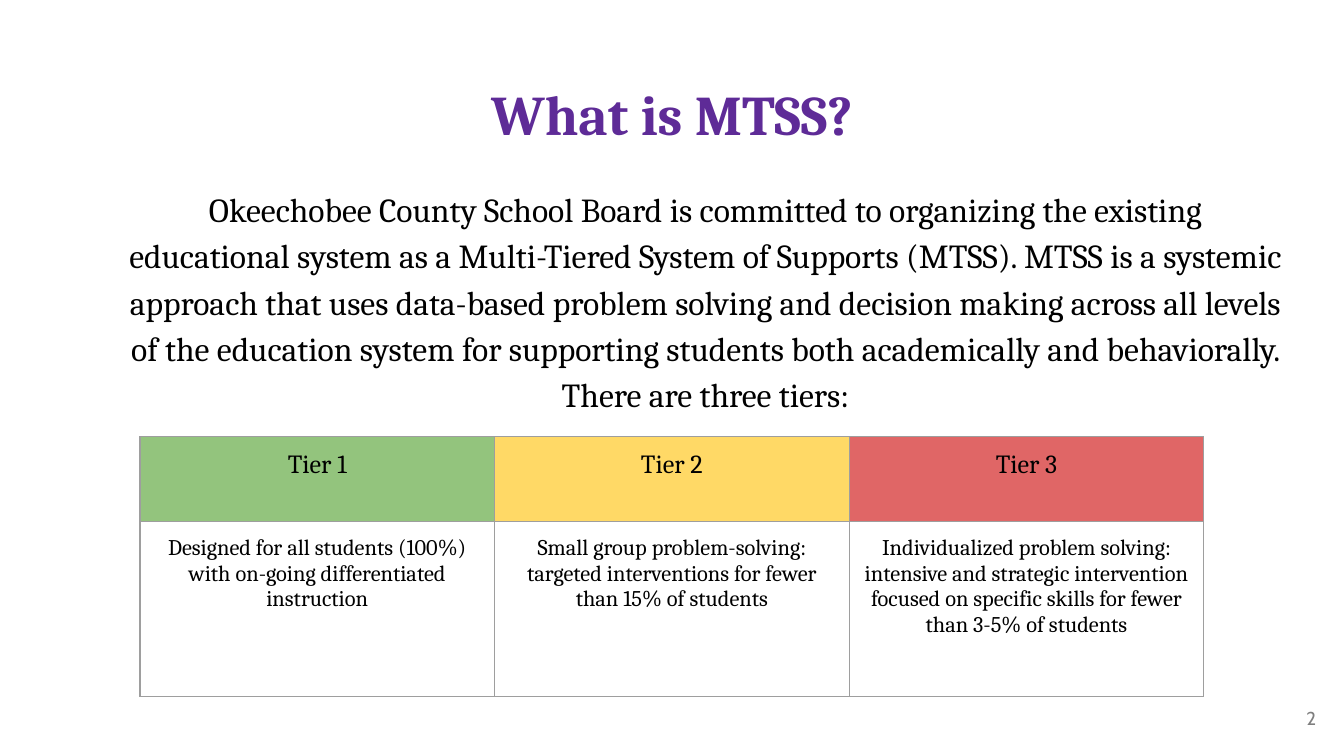
from dataclasses import dataclass

from lxml import etree
from pptx import Presentation
from pptx.dml.color import RGBColor
from pptx.enum.text import MSO_ANCHOR, PP_ALIGN
from pptx.oxml.ns import qn
from pptx.util import Pt

CENTER, RIGHT = PP_ALIGN.CENTER, PP_ALIGN.RIGHT
TOP, MIDDLE = MSO_ANCHOR.TOP, MSO_ANCHOR.MIDDLE


@dataclass(frozen=True)
class Theme:
    serif: str = "Cambria"
    sans: str = "Cabin"
    ink: str = "000000"
    heading: str = "5E2B97"
    muted: str = "7F7F7F"
    border: str = "9E9E9E"
    tier_fills: tuple = ("93C47D", "FFD966", "E06666")
    title_size: float = 30
    body_size: float = 18
    tier_size: float = 14
    detail_size: float = 12
    number_size: float = 10
    inset: float = 7.2
    border_width: float = 0.75


class SlideBuilder:
    """Draws styled text and tables on one slide."""

    def __init__(self, slide, theme):
        self.slide = slide
        self.theme = theme

    def style(self, paragraph, size, color, font, align=CENTER, bold=False):
        paragraph.alignment = align
        paragraph.font.size = Pt(size)
        paragraph.font.name = font
        paragraph.font.bold = bold
        paragraph.font.color.rgb = RGBColor.from_string(color)

    def text(self, words, box, size, color=None, font=None, align=CENTER,
             bold=False, anchor=TOP):
        frame = self.slide.shapes.add_textbox(*map(Pt, box)).text_frame
        frame.word_wrap = True
        frame.vertical_anchor = anchor
        frame.margin_left = frame.margin_right = Pt(self.theme.inset)
        frame.margin_top = frame.margin_bottom = Pt(self.theme.inset)
        paragraph = frame.paragraphs[0]
        paragraph.text = words
        self.style(paragraph, size, color or self.theme.ink,
                   font or self.theme.serif, align, bold)
        return paragraph

    def indented_text(self, words, box, size, indent, spacing):
        paragraph = self.text(words, box, size)
        paragraph.line_spacing = spacing
        properties = paragraph._p.get_or_add_pPr()
        properties.set("marL", str(Pt(indent)))
        properties.set("indent", "0")

    def borders(self, cell):
        properties = cell._tc.get_or_add_tcPr()
        for side in ("a:lnL", "a:lnR", "a:lnT", "a:lnB"):
            line = etree.SubElement(properties, qn(side),
                                    w=str(Pt(self.theme.border_width)))
            fill = etree.SubElement(line, qn("a:solidFill"))
            etree.SubElement(fill, qn("a:srgbClr"), val=self.theme.border)

    def cell(self, cell, words, size, fill=None):
        cell.margin_left = cell.margin_right = Pt(self.theme.inset)
        cell.margin_top = cell.margin_bottom = Pt(self.theme.inset)
        self.borders(cell)
        if fill:
            cell.fill.solid()
            cell.fill.fore_color.rgb = RGBColor.from_string(fill)
        else:
            cell.fill.background()
        paragraph = cell.text_frame.paragraphs[0]
        paragraph.text = words
        self.style(paragraph, size, self.theme.ink, self.theme.serif)

    def tier_table(self, tiers, left, top, column_width, row_heights):
        table = self.slide.shapes.add_table(
            len(row_heights), len(tiers), Pt(left), Pt(top),
            Pt(column_width * len(tiers)), Pt(sum(row_heights))).table
        table.horz_banding = False
        for row, height in zip(table.rows, row_heights):
            row.height = Pt(height)
        for column, (tier, detail) in enumerate(tiers):
            table.columns[column].width = Pt(column_width)
            self.cell(table.cell(0, column), tier, self.theme.tier_size,
                      self.theme.tier_fills[column])
            self.cell(table.cell(1, column), detail, self.theme.detail_size)


def main():
    theme = Theme()
    deck = Presentation()
    deck.slide_width, deck.slide_height = Pt(720), Pt(405)
    builder = SlideBuilder(deck.slides.add_slide(deck.slide_layouts[6]), theme)

    builder.text("What is MTSS?", (24.5, 35.3, 671, 49), theme.title_size,
                 theme.heading, bold=True)
    builder.indented_text(
        "Okeechobee County School Board is committed to organizing the "
        "existing educational system as a Multi-Tiered System of Supports "
        "(MTSS). MTSS is a systemic approach that uses data-based problem "
        "solving and decision making across all levels of the education "
        "system for supporting students both academically and behaviorally. "
        "There are three tiers:",
        (24.5, 90.7, 671, 296), theme.body_size, indent=36, spacing=1.15)
    builder.text("2", (669, 369.4, 43.2, 31), theme.number_size, theme.muted,
                 theme.sans, RIGHT, anchor=MIDDLE)
    tiers = (
        ("Tier 1", "Designed for all students (100%) with on-going "
                   "differentiated instruction"),
        ("Tier 2", "Small group problem-solving: targeted interventions for "
                   "fewer than 15% of students"),
        ("Tier 3", "Individualized problem solving: intensive and strategic "
                   "intervention focused on specific skills for fewer than "
                   "3-5% of students"),
    )
    builder.tier_table(tiers, left=75, top=234, column_width=190,
                       row_heights=(45.5, 93.6))
    deck.save("out.pptx")


if __name__ == "__main__":
    main()
